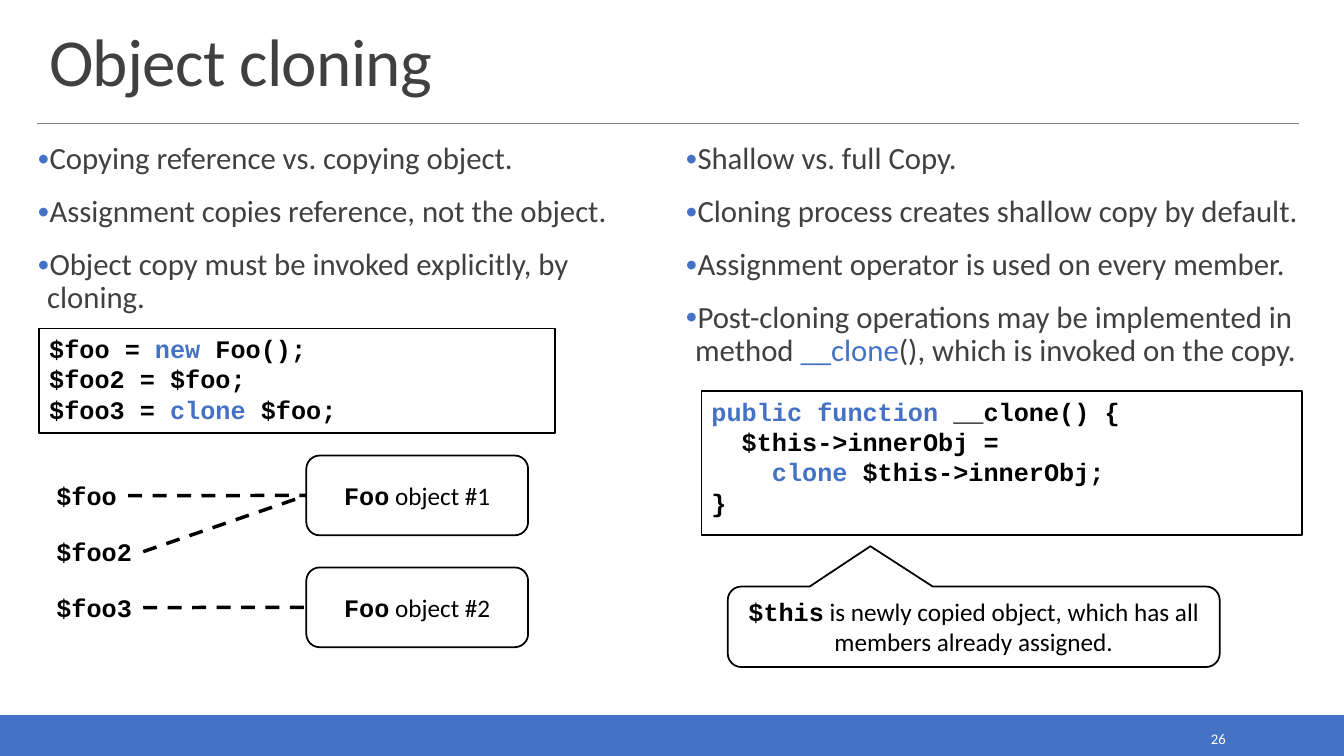
from dataclasses import dataclass
from typing import NamedTuple

from lxml import etree
from pptx import Presentation
from pptx.dml.color import RGBColor
from pptx.enum.dml import MSO_LINE
from pptx.enum.shapes import MSO_CONNECTOR, MSO_SHAPE
from pptx.enum.text import MSO_ANCHOR, PP_ALIGN
from pptx.oxml.ns import qn
from pptx.util import Cm, Pt

RECTANGLE = MSO_SHAPE.RECTANGLE
ROUNDED = MSO_SHAPE.ROUNDED_RECTANGLE
CALLOUT = MSO_SHAPE.ROUNDED_RECTANGULAR_CALLOUT
STRAIGHT = MSO_CONNECTOR.STRAIGHT
DASH = MSO_LINE.DASH
TOP, MIDDLE, BOTTOM = MSO_ANCHOR.TOP, MSO_ANCHOR.MIDDLE, MSO_ANCHOR.BOTTOM
LEFT, CENTER, RIGHT = PP_ALIGN.LEFT, PP_ALIGN.CENTER, PP_ALIGN.RIGHT
LEFT_SITE, RIGHT_SITE = 1, 3

COLORS = {
    "accent": "4472C4",
    "heading": "404040",
    "rule": "808080",
    "ink": "000000",
    "paper": "FFFFFF",
}


class Box(NamedTuple):
    """Left, top, width and height in centimetres."""
    left: float
    top: float
    width: float
    height: float


class Style(NamedTuple):
    font: str
    size: float
    color: str
    bold: bool = False


class Piece(NamedTuple):
    """A run that may differ from the style of its paragraph."""
    text: str
    style: Style | None = None


@dataclass
class Frame:
    box: Box
    lines: list[list[Piece]]
    style: Style
    align: PP_ALIGN = LEFT
    anchor: MSO_ANCHOR = TOP
    wrap: bool = True


@dataclass
class Reference:
    name: str
    width: float
    target: int


TITLE = Style("Calibri", 48, "heading")
BODY = Style("Calibri", 22, "heading")
BODY_ACCENT = BODY._replace(color="accent")
NUMBER = Style("Calibri", 10.5, "paper")
CODE = Style("Courier New", 18, "ink", True)
KEYWORD = CODE._replace(color="accent")
CAPTION = Style("Calibri", 18, "ink")

BULLET_LISTS = [
    Frame(Box(0.94, 3.51, 15.82, 4.39), [
        [Piece("Copying reference vs. copying object.")],
        [Piece("Assignment copies reference, not the object.")],
        [Piece("Object copy must be invoked explicitly, by cloning.")],
    ], BODY),
    Frame(Box(17.27, 3.51, 15.47, 6.02), [
        [Piece("Shallow vs. full Copy.")],
        [Piece("Cloning process creates shallow copy by default.")],
        [Piece("Assignment operator is used on every member.")],
        [Piece("Post-cloning operations may be implemented in method "),
         Piece("__clone", BODY_ACCENT),
         Piece("(), which is invoked on the copy.")],
    ], BODY),
]

CODE_BLOCKS = [
    Frame(Box(0.99, 8.28, 13, 2.64), [
        [Piece("$foo = "), Piece("new", KEYWORD), Piece(" Foo();")],
        [Piece("$foo2 = $foo;")],
        [Piece("$foo3 = "), Piece("clone", KEYWORD), Piece(" $foo;")],
    ], CODE),
    Frame(Box(17.68, 9.86, 15.14, 3.63), [
        [Piece("public function ", KEYWORD), Piece("__clone() {")],
        [Piece("  $this->innerObj =")],
        [Piece("    "), Piece("clone", KEYWORD), Piece(" $this->innerObj;")],
        [Piece("}")],
    ], CODE),
]

REFERENCES = [
    Reference("$foo", 2.06, 0),
    Reference("$foo2", 2.44, 0),
    Reference("$foo3", 2.44, 1),
]
REFERENCE_TOP, REFERENCE_STEP = 11.98, 1.41
OBJECT_TOP, OBJECT_STEP = 11.48, 2.82


def rgb(name: str) -> RGBColor:
    return RGBColor.from_string(COLORS[name])


def apply_style(font, style: Style) -> None:
    font.name, font.size, font.bold = style.font, Pt(style.size), style.bold
    font.color.rgb = rgb(style.color)


def fill_text(shape, frame: Frame) -> None:
    text_frame = shape.text_frame
    text_frame.word_wrap = frame.wrap
    text_frame.vertical_anchor = frame.anchor
    for index, pieces in enumerate(frame.lines):
        paragraph = text_frame.add_paragraph() if index else text_frame.paragraphs[0]
        paragraph.alignment = frame.align
        apply_style(paragraph.font, frame.style)
        for piece in pieces:
            run = paragraph.add_run()
            run.text = piece.text
            if piece.style:
                apply_style(run.font, piece.style)


def add_text(slide, frame: Frame):
    shape = slide.shapes.add_textbox(*map(Cm, frame.box))
    fill_text(shape, frame)
    return shape


def add_outlined(slide, kind: MSO_SHAPE, frame: Frame, fill: str | None = None):
    shape = slide.shapes.add_shape(kind, *map(Cm, frame.box))
    shape.shadow.inherit = False
    if fill:
        shape.fill.solid()
        shape.fill.fore_color.rgb = rgb(fill)
    else:
        shape.fill.background()
    shape.line.color.rgb = rgb("ink")
    shape.line.width = Pt(1.25)
    fill_text(shape, frame)
    return shape


def add_line(slide, start: tuple[float, float], end: tuple[float, float],
             color: str, width: float):
    line = slide.shapes.add_connector(STRAIGHT, *map(Cm, (*start, *end)))
    line.line.color.rgb = rgb(color)
    line.line.width = Pt(width)
    etree.SubElement(line._element.spPr, qn("a:effectLst"))
    return line


def add_bullet_list(slide, frame: Frame) -> None:
    text_frame = add_text(slide, frame).text_frame
    text_frame.margin_left = text_frame.margin_right = 0
    text_frame.margin_top = text_frame.margin_bottom = Cm(0.1)
    for paragraph in text_frame.paragraphs:
        paragraph.line_spacing = 0.9
        paragraph.space_before, paragraph.space_after = Pt(12), Pt(2)
        properties = paragraph._p.get_or_add_pPr()
        properties.set("marL", str(Cm(0.25)))
        properties.set("indent", str(Cm(-0.25)))
        defaults = properties.find(qn("a:defRPr"))
        bullet_color = etree.Element(qn("a:buClr"))
        etree.SubElement(bullet_color, qn("a:srgbClr"), val=COLORS["accent"])
        defaults.addprevious(bullet_color)
        for tag, name, value in (("a:buSzPct", "val", "80000"),
                                 ("a:buFont", "typeface", "Calibri"),
                                 ("a:buChar", "char", "•")):
            defaults.addprevious(etree.Element(qn(tag), {name: value}))


def add_page_furniture(slide) -> None:
    """Draw the footer bar, page number, title and the rule under it."""
    bar = slide.shapes.add_shape(RECTANGLE, 0, Cm(18.03), Cm(33.87), Cm(1.02))
    bar.shadow.inherit = False
    bar.fill.solid()
    bar.fill.fore_color.rgb = bar.line.color.rgb = rgb("accent")
    bar.line.width = Pt(1.25)
    add_line(slide, (0.94, 3.12), (32.74, 3.12), "rule", 0.5)
    title = add_text(slide, Frame(Box(0.99, 0.51, 31.8, 2.13),
                                  [[Piece("Object cloning")]], TITLE, anchor=BOTTOM))
    heading = title.text_frame.paragraphs[0]
    heading.line_spacing = 0.85
    heading.runs[0]._r.get_or_add_rPr().set("spc", "-50")
    add_text(slide, Frame(Box(27.51, 18.26, 3.63, 0.71),
                          [[Piece("26")]], NUMBER, RIGHT, MIDDLE))


def add_reference_diagram(slide) -> None:
    objects = []
    for index in range(2):
        box = Box(7.72, OBJECT_TOP + index * OBJECT_STEP, 5.59, 2.01)
        text = [[Piece("Foo", CODE), Piece(f" object #{index + 1}")]]
        objects.append(add_outlined(
            slide, ROUNDED, Frame(box, text, CAPTION, CENTER, MIDDLE), "paper"))
    for index, reference in enumerate(REFERENCES):
        box = Box(1.17, REFERENCE_TOP + index * REFERENCE_STEP, reference.width, 1.02)
        label = add_text(slide, Frame(box, [[Piece(reference.name)]], CODE, wrap=False))
        link = add_line(slide, (0, 0), (1, 1), "ink", 2.5)
        link.line.dash_style = DASH
        link.begin_connect(label, RIGHT_SITE)
        link.end_connect(objects[reference.target], LEFT_SITE)


def main() -> None:
    presentation = Presentation()
    presentation.slide_width, presentation.slide_height = Cm(33.87), Cm(19.05)
    slide = presentation.slides.add_slide(presentation.slide_layouts[6])
    add_page_furniture(slide)
    for frame in BULLET_LISTS:
        add_bullet_list(slide, frame)
    add_reference_diagram(slide)
    for frame in CODE_BLOCKS:
        add_outlined(slide, RECTANGLE, frame)
    remark = [[Piece("$this", CODE),
               Piece(" is newly copied object, which has all members already assigned.")]]
    callout = add_outlined(slide, CALLOUT, Frame(
        Box(18.34, 14.78, 12.4, 2.03), remark, CAPTION, CENTER, MIDDLE), "paper")
    for index, value in enumerate((-0.21, -1, 0.17)):
        callout.adjustments[index] = value
    presentation.save("out.pptx")


if __name__ == "__main__":
    main()
